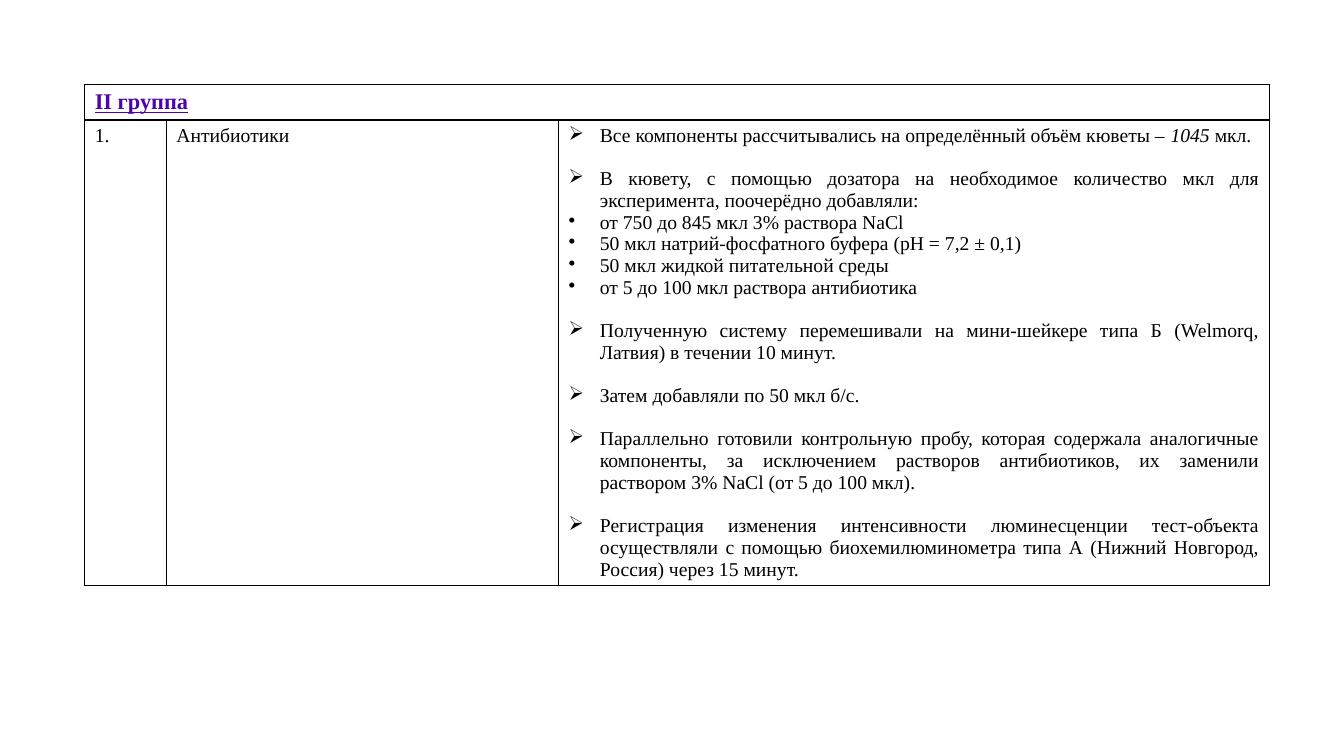
from lxml import etree
from pptx import Presentation
from pptx.dml.color import RGBColor
from pptx.enum.text import PP_ALIGN
from pptx.oxml.ns import qn
from pptx.util import Inches, Pt

JUST = PP_ALIGN.JUSTIFY
FONT = "Times New Roman"
SIZE = 14
COLORS = {"text": "000000", "head": "4D05AB", "line": "000000", "fill": "FFFFFF"}
COLS = [0.81, 3.89, 7.05]
ROWS = [0.35, 4.62]
INDENT = 0.31
GAP = 15.5
ARROW, DOT = "➢", "•"

# Each step: bullet and its runs; a run is text and italic flag
STEPS = [
    (ARROW, [("Все компоненты рассчитывались на определённый объём кюветы – ", False),
             ("1045 ", True), ("мкл.", False)]),
    (ARROW, [("В кювету, с помощью дозатора на необходимое количество мкл для "
              "эксперимента, поочерёдно добавляли:", False)]),
    (DOT, [("от 750 до 845 мкл 3% раствора NaCl", False)]),
    (DOT, [("50 мкл натрий-фосфатного буфера (pH = 7,2 ± 0,1)", False)]),
    (DOT, [("50 мкл жидкой питательной среды", False)]),
    (DOT, [("от 5 до 100 мкл раствора антибиотика", False)]),
    (ARROW, [("Полученную систему перемешивали на мини-шейкере типа Б "
              "(Welmorq, Латвия) в течении 10 минут.", False)]),
    (ARROW, [("Затем добавляли по 50 мкл б/с.", False)]),
    (ARROW, [("Параллельно готовили контрольную пробу, которая содержала аналогичные "
              "компоненты, за исключением растворов антибиотиков, их заменили "
              "раствором 3% NaCl (от 5 до 100 мкл).", False)]),
    (ARROW, [("Регистрация изменения интенсивности люминесценции тест-объекта "
              "осуществляли с помощью биохемилюминометра типа А (Нижний Новгород, "
              "Россия) через 15 минут.", False)]),
]


def style(para, size=SIZE, color="text", bold=False):
    para.alignment = JUST
    font = para.font
    font.name, font.size, font.bold = FONT, Pt(size), bold
    font.color.rgb = RGBColor.from_string(COLORS[color])


def frame(cell):
    """Plain fill and a thin line on all four sides."""
    props = cell._tc.get_or_add_tcPr()
    for side in ("a:lnL", "a:lnR", "a:lnT", "a:lnB"):
        line = etree.SubElement(props, qn(side), w=str(Pt(1)))
        fill = etree.SubElement(line, qn("a:solidFill"))
        etree.SubElement(fill, qn("a:srgbClr"), val=COLORS["line"])
    cell.fill.solid()
    cell.fill.fore_color.rgb = RGBColor.from_string(COLORS["fill"])


def add_step(para, mark, runs, gap):
    props = para._p.get_or_add_pPr()
    props.set("marL", str(Inches(INDENT)))
    props.set("indent", str(-Inches(INDENT)))
    etree.SubElement(props, qn("a:buChar"), char=mark)
    para.space_before = Pt(gap)
    style(para)
    for text, slant in runs:
        run = para.add_run()
        run.text = text
        if slant:
            run.font.italic = True


def fill_steps(cell):
    body = cell.text_frame
    for i, (mark, runs) in enumerate(STEPS):
        para = body.add_paragraph() if i else body.paragraphs[0]
        add_step(para, mark, runs, GAP if i and mark == ARROW else 0)


def add_group(slide, left, top):
    """Table of one group: heading row, then number, name and steps."""
    shape = slide.shapes.add_table(len(ROWS), len(COLS), Inches(left), Inches(top),
                                   Inches(sum(COLS)), Inches(sum(ROWS)))
    table = shape.table
    table.first_row = table.horz_banding = False
    for col, width in zip(table.columns, COLS):
        col.width = Inches(width)
    for row, height in zip(table.rows, ROWS):
        row.height = Inches(height)
    for cell in table.iter_cells():
        frame(cell)

    # Heading
    head = table.cell(0, 0)
    head.merge(table.cell(0, len(COLS) - 1))
    head.text = "II группа"
    para = head.text_frame.paragraphs[0]
    style(para, 16, "head", True)
    para.font.underline = True

    # Number and name
    for i, text in enumerate(("1.", "Антибиотики")):
        cell = table.cell(1, i)
        cell.text = text
        style(cell.text_frame.paragraphs[0])

    fill_steps(table.cell(1, 2))


def main():
    deck = Presentation()
    deck.slide_width, deck.slide_height = Inches(13.33), Inches(7.5)
    slide = deck.slides.add_slide(deck.slide_layouts[6])
    add_group(slide, 0.84, 0.84)
    deck.save("out.pptx")


if __name__ == "__main__":
    main()
